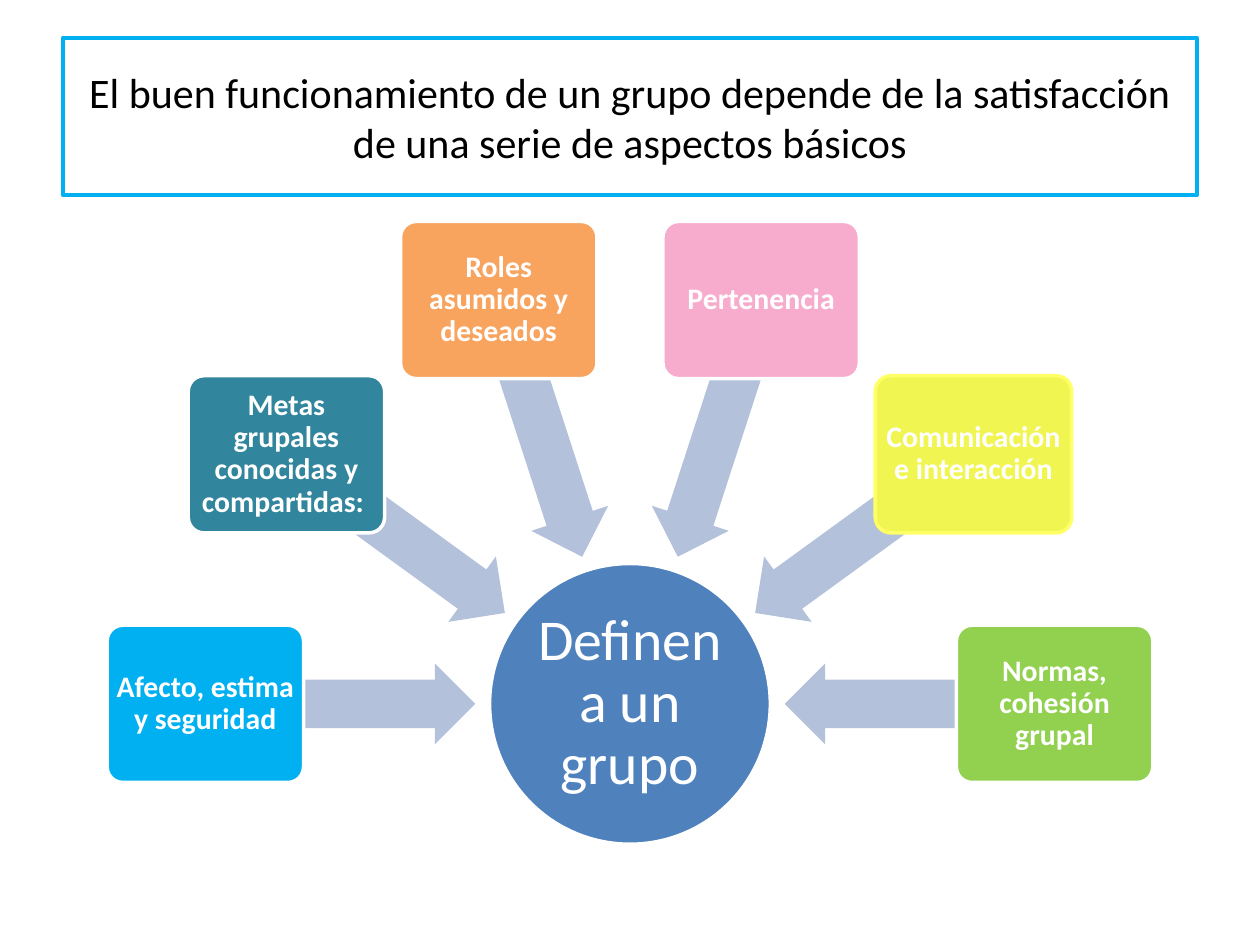
from dataclasses import dataclass
from math import cos, radians, sin

from pptx import Presentation
from pptx.dml.color import RGBColor
from pptx.enum.shapes import MSO_SHAPE
from pptx.enum.text import MSO_ANCHOR, PP_ALIGN
from pptx.util import Cm, Pt

RECT, OVAL = MSO_SHAPE.RECTANGLE, MSO_SHAPE.OVAL
ROUND, ARROW = MSO_SHAPE.ROUNDED_RECTANGLE, MSO_SHAPE.LEFT_ARROW
MIDDLE, CENTER = MSO_ANCHOR.MIDDLE, PP_ALIGN.CENTER


@dataclass(frozen=True)
class Theme:
    font: str = "Calibri"
    black: str = "000000"
    white: str = "FFFFFF"
    title_line: str = "00B0F0"
    hub: str = "4F81BD"
    arrow: str = "B3C1DB"
    title_size: int = 24
    hub_size: int = 33
    box_size: int = 17


THEME = Theme()

# Radial layout in cm, measured from the hub centre
HUB_X, HUB_Y, HUB_D = 12.7, 14.19, 5.66
ARROW_RADIUS, ARROW_W, ARROW_H = 5.84, 5.44, 1.63
BOX_RADIUS, BOX_W, BOX_H = 8.56, 3.96, 3.17
START_ANGLE, SWEEP = 180, 180

# Text, fill and outline, clockwise from the left
ASPECTS = [
    ("Afecto, estima y seguridad", "00B0F0", THEME.white),
    ("Metas grupales conocidas y compartidas: ", "31859C", THEME.white),
    ("Roles asumidos y deseados", "F8A45E", THEME.white),
    ("Pertenencia", "F7ABCD", THEME.white),
    ("Comunicación e interacción", "F1F551", "FFFF66"),
    ("Normas, cohesión grupal", "92D050", THEME.white),
]


def set_all(obj, formats):
    for name, value in formats.items():
        setattr(obj, name, value)


def add_shape(s, kind, x, y, w, h, fill=None, line=None, line_w=2):
    """Add a preset shape centred on (x, y)."""
    sp = s.shapes.add_shape(kind, Cm(x - w / 2), Cm(y - h / 2), Cm(w), Cm(h))
    sp.shadow.inherit = False
    if fill:
        sp.fill.solid()
        sp.fill.fore_color.rgb = RGBColor.from_string(fill)
    else:
        sp.fill.background()
    if line:
        sp.line.color.rgb = RGBColor.from_string(line)
        sp.line.width = Pt(line_w)
    else:
        sp.line.fill.background()
    return sp


def add_text(sp, text, size, color, inset, spacing=0.9, bold=False):
    tf = sp.text_frame
    sides = ("left", "top", "right", "bottom")
    set_all(tf, {f"margin_{side}": Cm(inset) for side in sides})
    set_all(tf, {"word_wrap": True, "vertical_anchor": MIDDLE})
    p = tf.paragraphs[0]
    set_all(p, {"alignment": CENTER, "line_spacing": spacing})
    r = p.add_run()
    r.text = text
    set_all(r.font, {"name": THEME.font, "size": Pt(size), "bold": bold})
    r.font.color.rgb = RGBColor.from_string(color)


def add_title(s, text):
    sp = add_shape(s, RECT, 12.7, 2.35, 22.86, 3.18, line=THEME.title_line, line_w=2.25)
    add_text(sp, text, THEME.title_size, THEME.black, 0.25, spacing=1.0)


def add_hub(s, text):
    sp = add_shape(s, OVAL, HUB_X, HUB_Y, HUB_D, HUB_D, THEME.hub, THEME.white)
    add_text(sp, text, THEME.hub_size, THEME.white, 0.05)


def polar(radius, angle):
    a = radians(angle)
    return HUB_X + radius * cos(a), HUB_Y + radius * sin(a)


def add_aspect(s, angle, text, fill, line):
    # Arrow towards the hub
    sp = add_shape(s, ARROW, *polar(ARROW_RADIUS, angle), ARROW_W, ARROW_H, THEME.arrow)
    sp.adjustments[0], sp.adjustments[1] = 0.6, 0.5
    sp.rotation = angle % 360
    # Box at the outer end
    sp = add_shape(s, ROUND, *polar(BOX_RADIUS, angle), BOX_W, BOX_H, fill, line)
    sp.adjustments[0] = 0.1
    add_text(sp, text, THEME.box_size, THEME.white, 0.08, bold=True)


def main():
    prs = Presentation()
    set_all(prs, {"slide_width": Cm(25.4), "slide_height": Cm(19.05)})
    s = prs.slides.add_slide(prs.slide_layouts[6])

    add_title(s, "El buen funcionamiento de un grupo depende de la "
                 "satisfacción de una serie de aspectos básicos")
    add_hub(s, "Definen a un grupo")
    step = SWEEP / (len(ASPECTS) - 1)
    for i, aspect in enumerate(ASPECTS):
        add_aspect(s, START_ANGLE + i * step, *aspect)

    prs.save("out.pptx")


if __name__ == "__main__":
    main()
